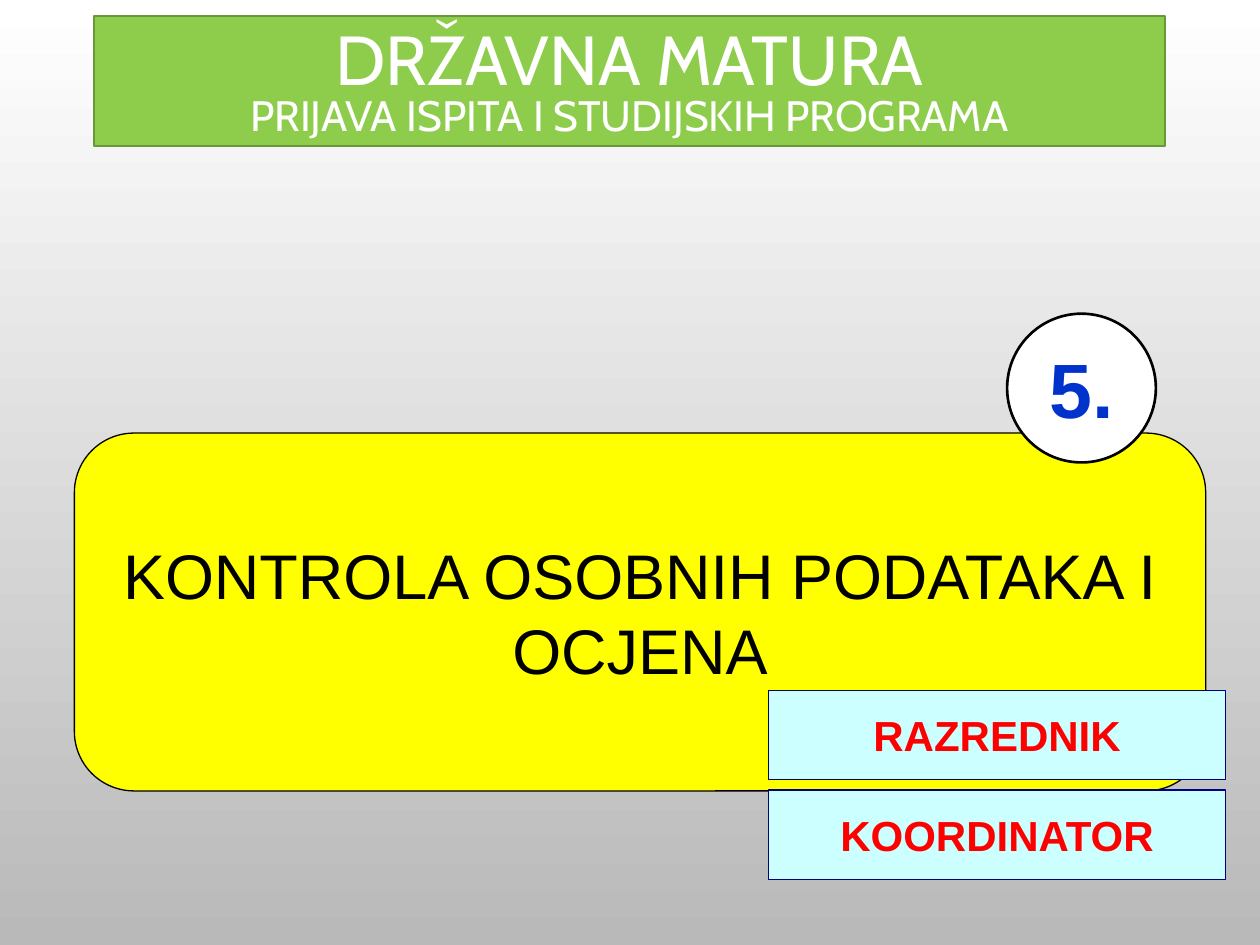
import pptx
import pptx.util
import pptx.dml.color
import pptx.enum.shapes
import pptx.enum.text

Pt = pptx.util.Pt
RGB = pptx.dml.color.RGBColor
Form = pptx.enum.shapes.MSO_SHAPE
Anchor = pptx.enum.text.MSO_ANCHOR
Align = pptx.enum.text.PP_ALIGN

WHITE = RGB(0xFF, 0xFF, 0xFF)
BLACK = RGB(0, 0, 0)
GREY = RGB(0xB9, 0xB9, 0xB9)
YELLOW = RGB(0xFF, 0xFF, 0)
BLUE = RGB(0, 0x33, 0xCC)
CYAN = RGB(0xCC, 0xFF, 0xFF)
NAVY = RGB(0, 0, 0x80)
RED = RGB(0xFF, 0, 0)
GREEN = RGB(0x8E, 0xCD, 0x4C)
MOSS = RGB(0x69, 0x98, 0x38)

deck = pptx.Presentation()
deck.slide_width, deck.slide_height = Pt(720), Pt(540)
slide = deck.slides.add_slide(deck.slide_layouts[6])

back = slide.background.fill
back.gradient()
back.gradient_angle = 270
for stop, color, place in zip(back.gradient_stops, (WHITE, GREY), (0, 1)):
    stop.color.rgb = color
    stop.position = place


def add_box(form, left, top, width, height, fill, edge, weight):
    box = slide.shapes.add_shape(form, Pt(left), Pt(top), Pt(width), Pt(height))
    box.shadow.inherit = False
    box.fill.solid()
    box.fill.fore_color.rgb = fill
    box.line.color.rgb = edge
    box.line.width = Pt(weight)
    return box


def put_text(box, *lines, color, font="Arial", bold=False, wrap=True,
             anchor=Anchor.MIDDLE, space=1.0):
    frame = box.text_frame
    frame.word_wrap = wrap
    frame.vertical_anchor = anchor
    para = frame.paragraphs[0]
    para.alignment = Align.CENTER
    para.line_spacing = space
    for num, (text, size) in enumerate(lines):
        if num:
            para.add_line_break()
        run = para.add_run()
        run.text = text
        run.font.name = font
        run.font.size = Pt(size)
        run.font.bold = bold
        run.font.color.rgb = color


panel = add_box(Form.ROUNDED_RECTANGLE, 42.5, 247.5, 646.5, 204.5, YELLOW, BLACK, 0.75)
put_text(panel, ("KONTROLA OSOBNIH PODATAKA I OCJENA", 36), color=BLACK)

badge = add_box(Form.OVAL, 575.5, 179.25, 85, 85, WHITE, BLACK, 1.5)
put_text(badge, ("5.", 44), color=BLUE, bold=True, wrap=False)

for row, role in enumerate(("RAZREDNIK", "KOORDINATOR")):
    tag = add_box(Form.RECTANGLE, 439.25, 394.5 + 57 * row, 261, 51, CYAN, NAVY, 0.75)
    put_text(tag, (role, 24), color=RED, bold=True, wrap=False)

title = add_box(Form.RECTANGLE, 53.75, 9, 612, 74.5, GREEN, MOSS, 1.25)
put_text(title, ("DRŽAVNA MATURA", 39.6),
         ("PRIJAVA ISPITA I STUDIJSKIH PROGRAMA", 24.3),
         color=WHITE, font="Cabin", anchor=Anchor.BOTTOM, space=0.8)

deck.save("out.pptx")
